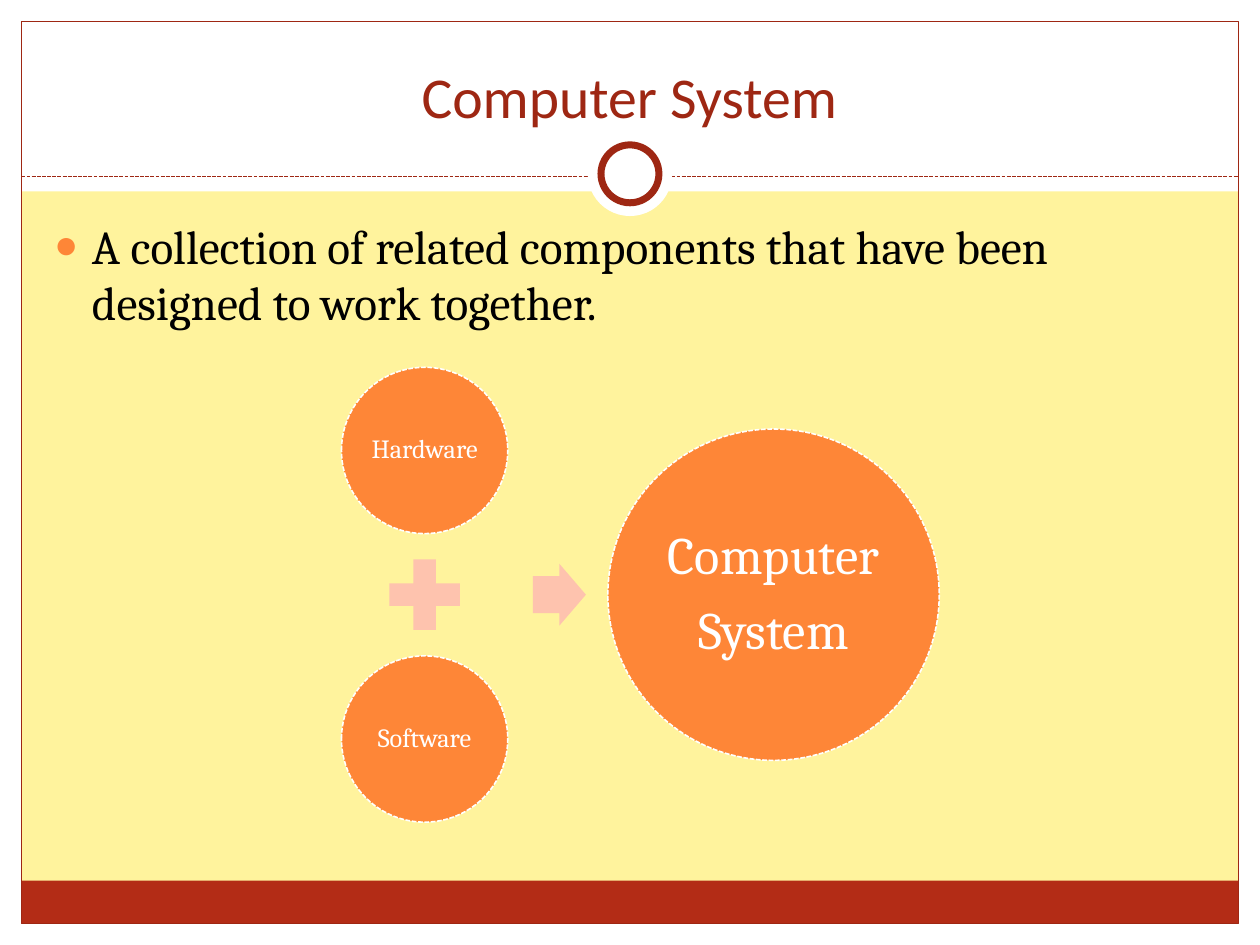
from dataclasses import dataclass

from lxml import etree
from pptx import Presentation
from pptx.dml.color import RGBColor
from pptx.enum.dml import MSO_LINE
from pptx.enum.shapes import MSO_CONNECTOR, MSO_SHAPE
from pptx.enum.text import MSO_ANCHOR, MSO_AUTO_SIZE, PP_ALIGN
from pptx.oxml.ns import qn
from pptx.util import Inches, Pt


@dataclass(frozen=True)
class Theme:
    background: str = "FFF39D"
    white: str = "FFFFFF"
    black: str = "000000"
    dark_red: str = "9E2713"
    red: str = "B32C16"
    orange: str = "FE8637"
    pink: str = "FEC3AE"
    heading_font: str = "Calibri"
    body_font: str = "Cambria"
    title_size: float = 33
    body_size: float = 27
    result_size: float = 30
    part_size: float = 15


THEME = Theme()
WIDTH, HEIGHT, MARGIN = 10, 7.5, 0.17
INNER_WIDTH = WIDTH - 2 * MARGIN
RULE_Y = 1.4

TITLE = "Computer System"
DEFINITION = "A collection of related components that have been designed to work together."
PARTS = ["Hardware", "Software"]
RESULT = ["Computer", "System"]

# Equation diagram: parts stacked around a middle line, result to the right
MIDDLE_Y = 4.72
PARTS_X, PART_SIZE, PART_PITCH = 3.37, 1.32, 2.29
PLUS_SIZE = 0.76
ARROW_X, ARROW_WIDTH, ARROW_HEIGHT = 4.44, 0.42, 0.49
RESULT_X, RESULT_SIZE = 6.14, 2.63


def color(code):
    return RGBColor.from_string(code)


def write(frame, lines, *, font, size, ink, align=PP_ALIGN.LEFT, anchor=MSO_ANCHOR.TOP,
          inset=None, spacing=None, before=0, after=0):
    frame.word_wrap = True
    frame.auto_size = MSO_AUTO_SIZE.NONE
    frame.vertical_anchor = anchor
    if inset is not None:
        frame.margin_left = frame.margin_right = Inches(inset)
        frame.margin_top = frame.margin_bottom = Inches(inset)
    for index, line in enumerate(lines):
        para = frame.paragraphs[0] if index == 0 else frame.add_paragraph()
        para.alignment = align
        para.line_spacing = spacing
        para.space_before, para.space_after = Pt(before), Pt(after)
        span = para.add_run()
        span.text = line
        span.font.name, span.font.size = font, Pt(size)
        span.font.color.rgb = color(ink)


def place(shape, left, top, width, height):
    shape.left, shape.top = Inches(left), Inches(top)
    shape.width, shape.height = Inches(width), Inches(height)


def add_shape(slide, kind, left, top, width, height, *, fill=None, line=None,
              weight=0.75, dash=None):
    shape = slide.shapes.add_shape(
        kind, Inches(left), Inches(top), Inches(width), Inches(height))
    shape.shadow.inherit = False
    if fill:
        shape.fill.solid()
        shape.fill.fore_color.rgb = color(fill)
    else:
        shape.fill.background()
    if line:
        shape.line.color.rgb = color(line)
        shape.line.width = Pt(weight)
        shape.line.dash_style = dash
    else:
        shape.line.fill.background()
    return shape


def add_centered(slide, kind, x, y, width, height, **style):
    return add_shape(slide, kind, x - width / 2, y - height / 2, width, height, **style)


def add_labelled_circle(slide, x, y, diameter, lines, size, inset):
    circle = add_centered(slide, MSO_SHAPE.OVAL, x, y, diameter, diameter,
                          fill=THEME.orange, line=THEME.white, weight=0.9,
                          dash=MSO_LINE.SQUARE_DOT)
    write(circle.text_frame, lines, font=THEME.body_font, size=size, ink=THEME.white,
          align=PP_ALIGN.CENTER, anchor=MSO_ANCHOR.MIDDLE, inset=inset,
          spacing=0.9, after=0.35 * size)


def add_frame(slide):
    bands = [
        (0, HEIGHT - MARGIN, WIDTH, MARGIN, THEME.white),
        (0, 0, WIDTH, 1.52, THEME.white),
        (0, 0, MARGIN, HEIGHT, THEME.white),
        (WIDTH - MARGIN, 0, MARGIN, HEIGHT, THEME.white),
        (MARGIN, 6.99, INNER_WIDTH, 0.34, THEME.red),
    ]
    for *area, fill in bands:
        add_shape(slide, MSO_SHAPE.RECTANGLE, *area, fill=fill)
    add_shape(slide, MSO_SHAPE.RECTANGLE, MARGIN, MARGIN, INNER_WIDTH,
              HEIGHT - 2 * MARGIN, line=THEME.dark_red)

    rule = slide.shapes.add_connector(
        MSO_CONNECTOR.STRAIGHT, Inches(MARGIN), Inches(RULE_Y),
        Inches(WIDTH - MARGIN), Inches(RULE_Y))
    rule.line.color.rgb = color(THEME.dark_red)
    rule.line.width = Pt(0.75)
    rule.line.dash_style = MSO_LINE.SQUARE_DOT
    etree.SubElement(rule.element.spPr, qn("a:effectLst"))

    ring_y = 1.38
    add_centered(slide, MSO_SHAPE.OVAL, WIDTH / 2, ring_y, 0.67, 0.67, fill=THEME.white)
    add_centered(slide, MSO_SHAPE.OVAL, WIDTH / 2, ring_y, 0.46, 0.46,
                 fill=THEME.white, line=THEME.dark_red, weight=4)


def add_bullet(para, indent):
    properties = para._p.get_or_add_pPr()
    properties.set("marL", str(Inches(indent)))
    properties.set("indent", str(-Inches(indent)))
    tint = etree.SubElement(properties, qn("a:buClr"))
    etree.SubElement(tint, qn("a:srgbClr"), val=THEME.orange)
    etree.SubElement(properties, qn("a:buSzPct"), val="85000")
    etree.SubElement(properties, qn("a:buChar"), char="●")


def fill_placeholders(slide):
    title, body = slide.shapes.title, slide.placeholders[1]
    place(title, 0.33, 0.25, 9.33, 0.83)
    write(title.text_frame, [TITLE], font=THEME.heading_font, size=THEME.title_size,
          ink=THEME.dark_red, align=PP_ALIGN.CENTER, anchor=MSO_ANCHOR.BOTTOM)
    place(body, 0.33, 1.67, 9.3, 5)
    write(body.text_frame, [DEFINITION], font=THEME.body_font, size=THEME.body_size,
          ink=THEME.black, before=0.2 * THEME.body_size)
    add_bullet(body.text_frame.paragraphs[0], 0.3)
    # Bring the text in front of the frame
    for holder in (title, body):
        holder.element.getparent().append(holder.element)


def add_equation(slide):
    for index, label in enumerate(PARTS):
        y = MIDDLE_Y + (index - (len(PARTS) - 1) / 2) * PART_PITCH
        add_labelled_circle(slide, PARTS_X, y, PART_SIZE, [label], THEME.part_size, 0.02)
    add_centered(slide, MSO_SHAPE.MATH_PLUS, PARTS_X, MIDDLE_Y, PLUS_SIZE, PLUS_SIZE,
                 fill=THEME.pink)
    arrow = add_centered(slide, MSO_SHAPE.RIGHT_ARROW, ARROW_X, MIDDLE_Y,
                         ARROW_WIDTH, ARROW_HEIGHT, fill=THEME.pink)
    arrow.adjustments[0] = 0.6
    arrow.adjustments[1] = 0.5
    add_labelled_circle(slide, RESULT_X, MIDDLE_Y, RESULT_SIZE, RESULT,
                        THEME.result_size, 0.04)


def main():
    deck = Presentation()
    deck.slide_width, deck.slide_height = Inches(WIDTH), Inches(HEIGHT)
    slide = deck.slides.add_slide(deck.slide_layouts[1])
    slide.background.fill.solid()
    slide.background.fill.fore_color.rgb = color(THEME.background)
    add_frame(slide)
    fill_placeholders(slide)
    add_equation(slide)
    deck.save("out.pptx")


if __name__ == "__main__":
    main()
